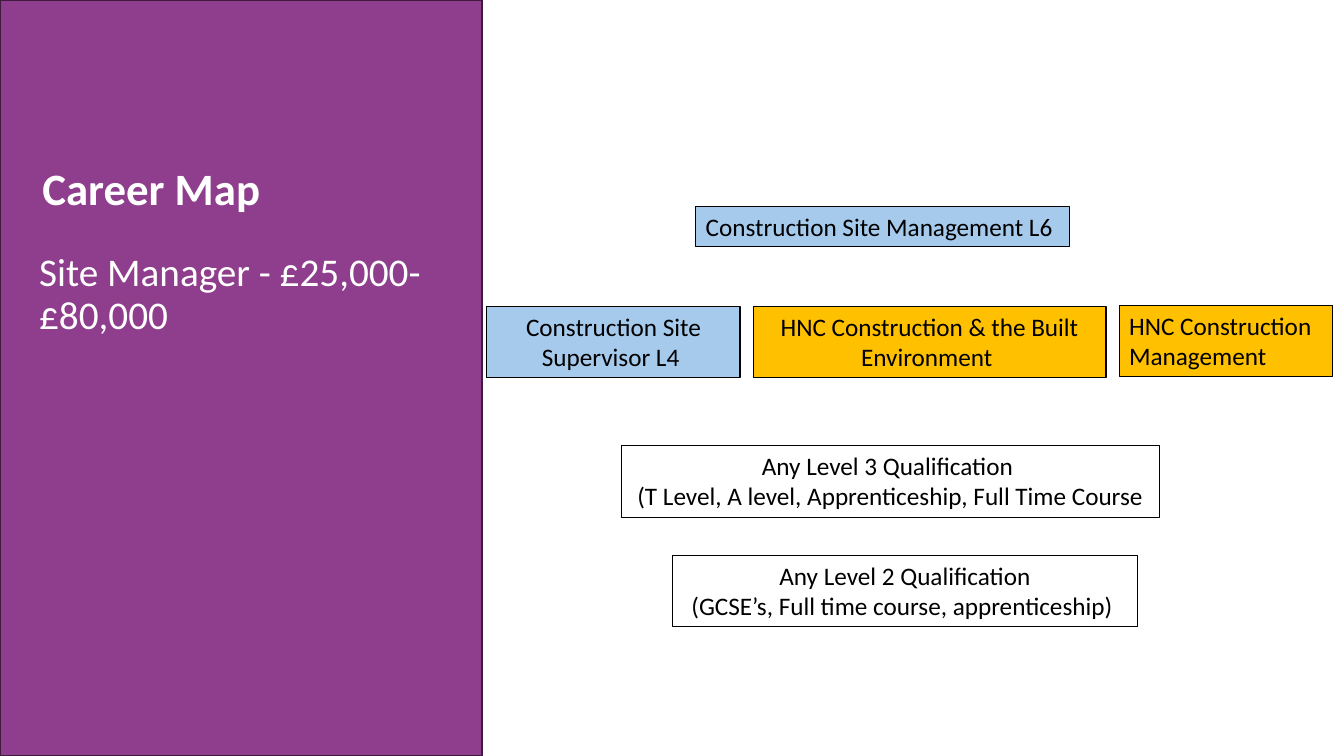
from pptx import Presentation
from pptx.dml.color import RGBColor
from pptx.enum.shapes import MSO_SHAPE
from pptx.enum.text import MSO_ANCHOR, PP_ALIGN
from pptx.util import Inches, Pt

RECTANGLE = MSO_SHAPE.RECTANGLE
TOP, MIDDLE = MSO_ANCHOR.TOP, MSO_ANCHOR.MIDDLE
LEFT, CENTER = PP_ALIGN.LEFT, PP_ALIGN.CENTER
TITLE_ONLY = 5
FONT = "Calibri"
COLORS = {
    "purple": "8F3E8D",
    "plum": "3F1B3E",
    "blue": "A6CAEC",
    "amber": "FFC000",
    "white": "FFFFFF",
    "black": "000000",
}

# Text, left, top, width, height, fill, alignment
QUALIFICATIONS = [
    ("Any Level 2 Qualification\n(GCSE’s, Full time course, apprenticeship) ",
     6.67, 5.51, 4.61, 0.71, None, CENTER),
    ("Any Level 3 Qualification \n(T Level, A level, Apprenticeship, Full Time Course",
     6.16, 4.42, 5.34, 0.71, None, CENTER),
    ("Construction Site Supervisor L4 ", 4.83, 3.04, 2.51, 0.71, "blue", CENTER),
    ("HNC Construction & the Built Environment ", 7.47, 3.04, 3.5, 0.71, "amber", CENTER),
    ("HNC Construction Management", 11.1, 3.03, 2.12, 0.71, "amber", LEFT),
    ("Construction Site Management L6", 6.9, 2.05, 3.71, 0.4, "blue", LEFT),
]


def rgb(name):
    return RGBColor.from_string(COLORS[name])


def write_text(frame, text, size=18, color="black", bold=False,
               align=LEFT, anchor=TOP, spacing=1.0):
    frame.word_wrap = True
    frame.vertical_anchor = anchor
    frame.text = text
    for paragraph in frame.paragraphs:
        paragraph.alignment = align
        paragraph.line_spacing = spacing
        paragraph.font.name = FONT
        paragraph.font.size = Pt(size)
        paragraph.font.bold = bold
        paragraph.font.color.rgb = rgb(color)


def add_box(slide, left, top, width, height, fill=None, line="black", weight=0.75):
    box = slide.shapes.add_shape(RECTANGLE, Inches(left), Inches(top),
                                 Inches(width), Inches(height))
    box.shadow.inherit = False
    if fill:
        box.fill.solid()
        box.fill.fore_color.rgb = rgb(fill)
    else:
        box.fill.background()
    box.line.color.rgb = rgb(line)
    box.line.width = Pt(weight)
    return box


def add_side_panel(slide):
    panel = add_box(slide, 0, 0, 4.78, 7.5, "purple", "plum", 1.5)
    # Send the panel behind the title
    slide.shapes.title._element.addprevious(panel._element)


def set_title(slide, text):
    title = slide.shapes.title
    title.left, title.top = Inches(0.32), Inches(1.53)
    title.width, title.height = Inches(4.11), Inches(0.72)
    write_text(title.text_frame, text, size=32, color="white", bold=True,
               anchor=MIDDLE, spacing=0.9)


def add_salary(slide, text):
    salary = slide.shapes.add_textbox(Inches(0.29), Inches(2.46),
                                      Inches(4.11), Inches(1.95))
    write_text(salary.text_frame, text, size=28, color="white", spacing=0.9)


def add_qualification(slide, text, left, top, width, height, fill, align):
    box = add_box(slide, left, top, width, height, fill)
    write_text(box.text_frame, text, align=align)


def main():
    deck = Presentation()
    deck.slide_width, deck.slide_height = Inches(13.33), Inches(7.5)
    slide = deck.slides.add_slide(deck.slide_layouts[TITLE_ONLY])

    # Side panel with the role and its pay
    add_side_panel(slide)
    set_title(slide, "Career Map")
    add_salary(slide, "Site Manager - £25,000- £80,000")

    # Qualification steps, from entry level upwards
    for qualification in QUALIFICATIONS:
        add_qualification(slide, *qualification)

    deck.save("out.pptx")


if __name__ == "__main__":
    main()
